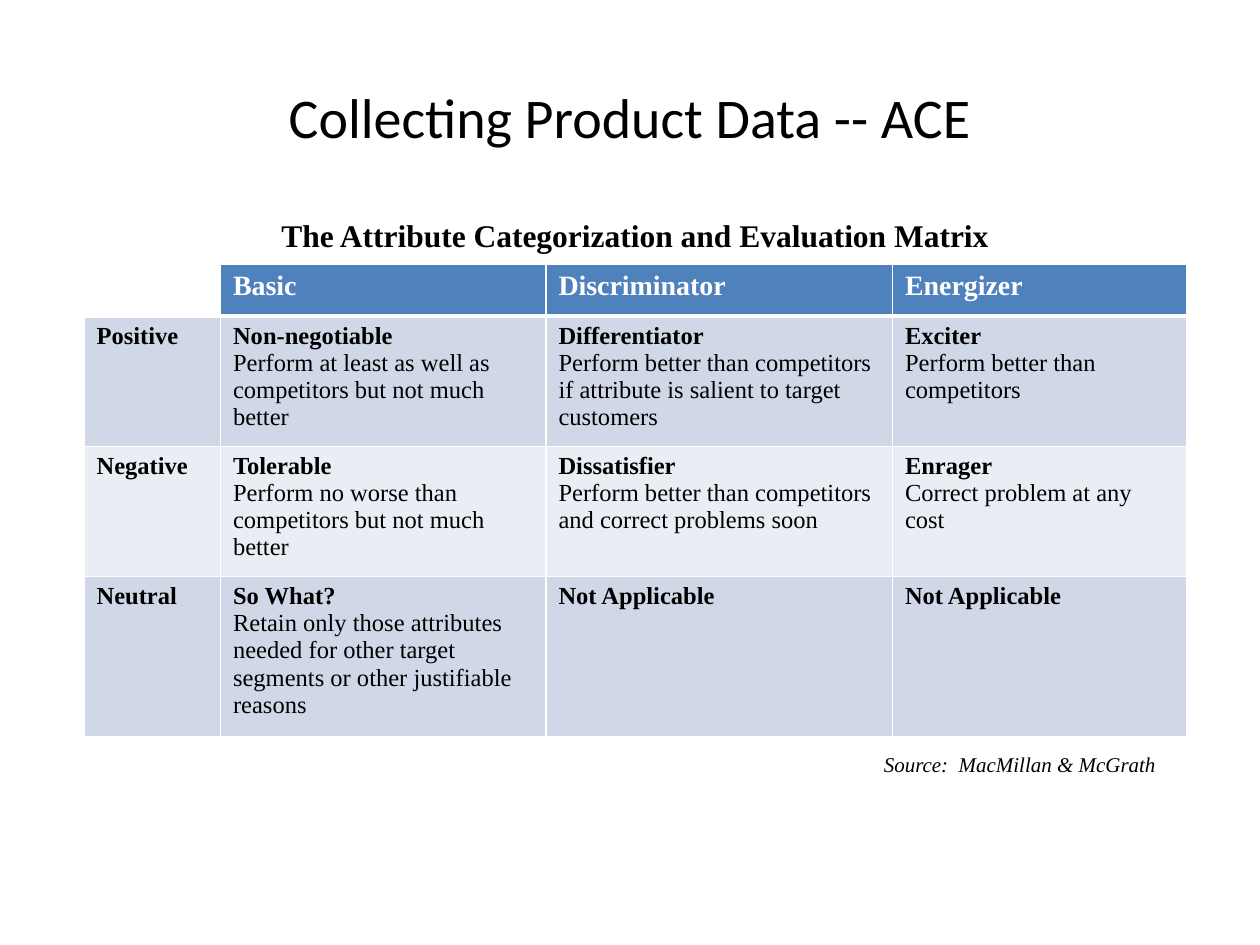
from dataclasses import dataclass

from lxml import etree
from pptx import Presentation
from pptx.dml.color import RGBColor
from pptx.enum.text import MSO_ANCHOR, PP_ALIGN
from pptx.oxml.ns import qn
from pptx.util import Inches, Pt

LEFT, CENTER = PP_ALIGN.LEFT, PP_ALIGN.CENTER
TOP, MIDDLE = MSO_ANCHOR.TOP, MSO_ANCHOR.MIDDLE
COLS, ROWS = 120, 90


@dataclass(frozen=True)
class Theme:
    sans: str = "Calibri"
    serif: str = "Times New Roman"
    ink: str = "000000"
    paper: str = "FFFFFF"
    head: str = "4F81BD"
    bands: tuple = ("D0D8E8", "E9EDF4")
    title: int = 32
    caption: int = 18
    header: int = 16
    body: int = 14
    source: int = 12


class Deck:
    def __init__(self, theme):
        self.theme = theme
        self.prs = Presentation()
        self.prs.slide_width, self.prs.slide_height = Inches(10), Inches(7.5)
        self.slide = self.prs.slides.add_slide(self.prs.slide_layouts[6])

    def x(self, cols):
        return round(self.prs.slide_width * cols / COLS)

    def y(self, rows):
        return round(self.prs.slide_height * rows / ROWS)

    def box(self, x, y, w, h):
        return self.x(x), self.y(y), self.x(w), self.y(h)

    def style(self, para, size, color=None, face=None, bold=False, italic=False):
        font = para.font
        font.name, font.size = face or self.theme.serif, Pt(size)
        font.bold, font.italic = bold, italic
        font.color.rgb = RGBColor.from_string(color or self.theme.ink)

    def text(self, words, place, size, align=LEFT, anchor=TOP, **look):
        frame = self.slide.shapes.add_textbox(*self.box(*place)).text_frame
        frame.word_wrap = True
        frame.vertical_anchor = anchor
        para = frame.paragraphs[0]
        para.text, para.alignment = words, align
        self.style(para, size, **look)

    def edges(self, cell, below):
        """Rule a cell on all sides, with its own width below."""
        props = cell._tc.get_or_add_tcPr()
        for spot, (side, width) in enumerate(
            (("lnL", 1), ("lnR", 1), ("lnT", 1), ("lnB", below))
        ):
            line = etree.Element(qn(f"a:{side}"), w=str(Pt(width)))
            fill = etree.SubElement(line, qn("a:solidFill"))
            etree.SubElement(fill, qn("a:srgbClr"), val=self.theme.paper)
            props.insert(spot, line)

    def cell(self, cell, words, fill, size, color, below):
        """Fill a cell; its first line is bold, the others plain."""
        if fill:
            cell.fill.solid()
            cell.fill.fore_color.rgb = RGBColor.from_string(fill)
        else:
            cell.fill.background()
        self.edges(cell, below)
        cell.text = words
        for n, para in enumerate(cell.text_frame.paragraphs):
            self.style(para, size, color, bold=n == 0)

    def matrix(self, data, x, y, widths, heights):
        place = self.box(x, y, sum(widths), sum(heights))
        table = self.slide.shapes.add_table(len(data), len(widths), *place).table
        table.horz_banding = False
        for col, width in zip(table.columns, widths):
            col.width = self.x(width)
        theme = self.theme
        for r, (row, height) in enumerate(zip(data, heights)):
            table.rows[r].height = self.y(height)
            for c, words in enumerate(row):
                if r == 0:
                    look = theme.head if words else None, theme.header, theme.paper, 3
                else:
                    look = theme.bands[(r - 1) % 2], theme.body, theme.ink, 1
                self.cell(table.cell(r, c), words, *look)


MATRIX = (
    ("", "Basic", "Discriminator", "Energizer"),
    (
        "Positive",
        "Non-negotiable\nPerform at least as well as competitors but not much better",
        "Differentiator\nPerform better than competitors if attribute is salient to target customers",
        "Exciter\nPerform better than competitors",
    ),
    (
        "Negative",
        "Tolerable\nPerform no worse than competitors but not much better",
        "Dissatisfier\nPerform better than competitors and correct problems soon",
        "Enrager\nCorrect problem at any cost",
    ),
    (
        "Neutral",
        "So What?\nRetain only those attributes needed for other target segments or other justifiable reasons",
        "Not Applicable",
        "Not Applicable",
    ),
)


def main():
    theme = Theme()
    deck = Deck(theme)
    deck.text("Collecting Product Data -- ACE", (6, 3.6, 108, 15), theme.title,
              CENTER, MIDDLE, face=theme.sans)
    deck.matrix(MATRIX, 8, 25.2, (13, 31, 33, 28), (4.9, 11.5, 11.5, 14))
    deck.text("Source:  MacMillan & McGrath", (83, 71, 29, 3.6), theme.source,
              italic=True)
    deck.text("The Attribute Categorization and Evaluation Matrix",
              (8, 20, 105, 4.8), theme.caption, CENTER, bold=True)
    deck.prs.save("out.pptx")


if __name__ == "__main__":
    main()
